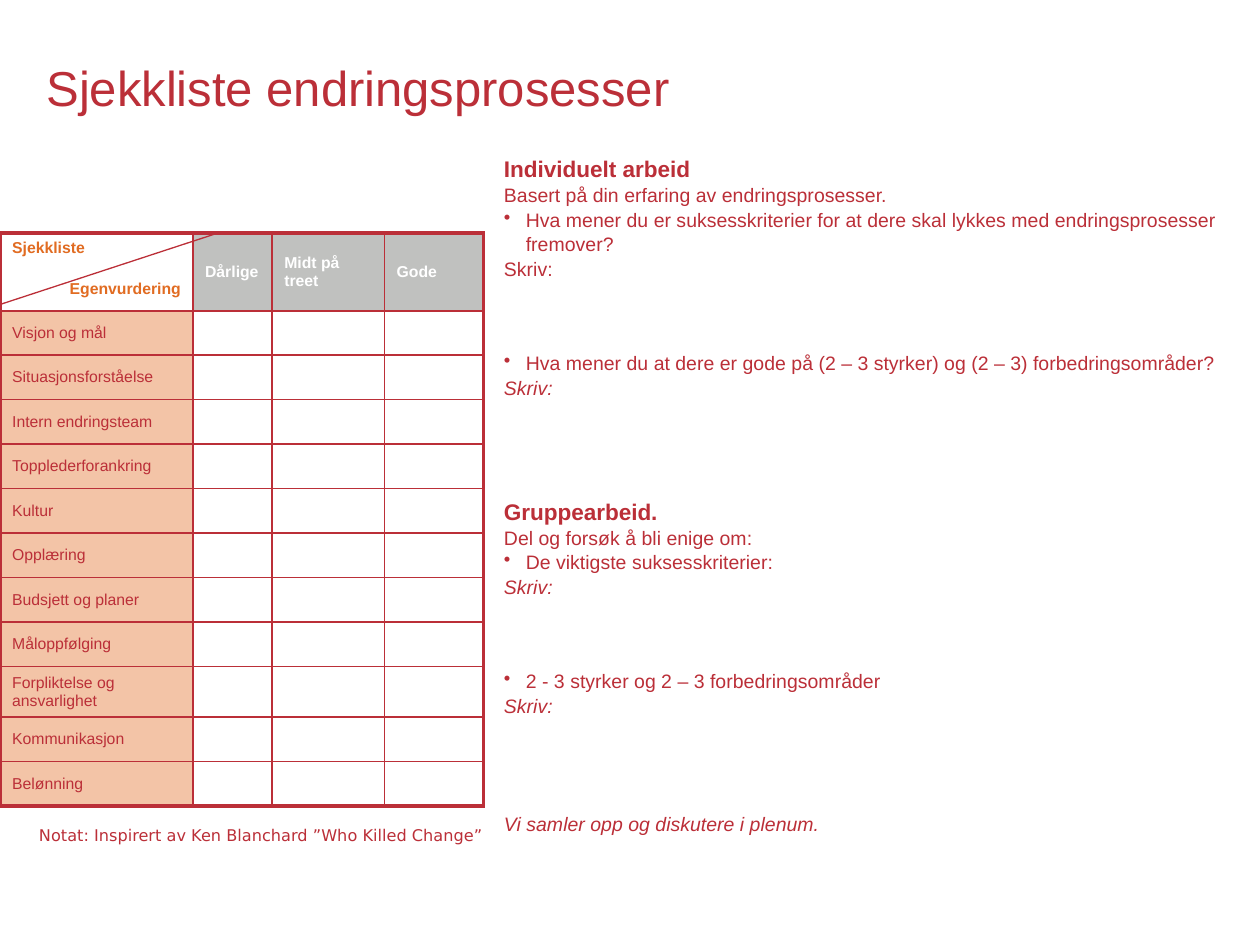
from lxml import etree
from pptx import Presentation
from pptx.dml.color import RGBColor
from pptx.enum.shapes import MSO_CONNECTOR, MSO_SHAPE
from pptx.enum.text import MSO_ANCHOR, PP_ALIGN
from pptx.oxml.ns import qn
from pptx.util import Pt

RED = RGBColor(0xBB, 0x2F, 0x38)
ORANGE = RGBColor(0xE1, 0x6C, 0x22)
PEACH = RGBColor(0xF3, 0xC4, 0xA7)
GREY = RGBColor(0xC0, 0xC1, 0xBF)
WHITE = RGBColor(0xFF, 0xFF, 0xFF)
MIDDLE, TOP = MSO_ANCHOR.MIDDLE, MSO_ANCHOR.TOP
LEFT, RIGHT = PP_ALIGN.LEFT, PP_ALIGN.RIGHT
STRAIGHT, RECTANGLE = MSO_CONNECTOR.STRAIGHT, MSO_SHAPE.RECTANGLE


def style(paragraph, size, color=RED, bold=False, italic=False, name="Arial"):
    font = paragraph.font
    font.name, font.size = name, Pt(size)
    font.bold, font.italic = bold, italic
    font.color.rgb = color


def add_border(cell, side, width):
    properties = cell._tc.get_or_add_tcPr()
    line = etree.SubElement(properties, qn(f"a:ln{side}"), w=str(Pt(width)))
    fill = etree.SubElement(line, qn("a:solidFill"))
    etree.SubElement(fill, qn("a:srgbClr"), val=str(RED))


presentation = Presentation()
presentation.slide_width, presentation.slide_height = Pt(720), Pt(540)
slide = presentation.slides.add_slide(presentation.slide_layouts[6])
shapes = slide.shapes

# Title
title = shapes.add_textbox(Pt(19.5), Pt(4.5), Pt(648), Pt(90)).text_frame
title.word_wrap = True
title.vertical_anchor = MIDDLE
title.text = "Sjekkliste endringsprosesser"
style(title.paragraphs[0], 28)

# Checklist table
HEADERS = ["Sjekkliste", "Dårlige", "Midt på treet", "Gode"]
TOPICS = ["Visjon og mål", "Situasjonsforståelse", "Intern endringsteam",
          "Topplederforankring", "Kultur", "Opplæring", "Budsjett og planer",
          "Måloppfølging", "Forpliktelse og ansvarlighet", "Kommunikasjon",
          "Belønning"]
COLUMN_WIDTHS = [110.25, 45.25, 64.25, 56.5]
ROW_HEIGHTS = [44.4] + [25.4] * 8 + [29] + [25.4] * 2
rows = [HEADERS] + [[topic, "", "", ""] for topic in TOPICS]
last_row, last_column = len(rows) - 1, len(HEADERS) - 1

table = shapes.add_table(len(rows), len(HEADERS), Pt(0), Pt(133.2),
                         Pt(sum(COLUMN_WIDTHS)), Pt(sum(ROW_HEIGHTS))).table
table.first_row = table.horz_banding = False
for column, width in zip(table.columns, COLUMN_WIDTHS):
    column.width = Pt(width)
for row, height in zip(table.rows, ROW_HEIGHTS):
    row.height = Pt(height)

for r, texts in enumerate(rows):
    for c, text in enumerate(texts):
        cell = table.cell(r, c)
        is_header, is_corner = r == 0, r == c == 0
        outer_sides = {"L": c == 0, "R": c == last_column,
                       "T": r == 0, "B": r == last_row}
        for side, is_outer in outer_sides.items():
            add_border(cell, side, 2.25 if is_outer else 1)
        if is_corner or (c > 0 and not is_header):
            cell.fill.background()
        else:
            cell.fill.solid()
            cell.fill.fore_color.rgb = GREY if is_header else PEACH
        cell.margin_left = cell.margin_right = Pt(7)
        cell.margin_top = cell.margin_bottom = Pt(3.6 if is_header else 0)
        cell.vertical_anchor = TOP if is_corner else MIDDLE
        cell.text = text
        color = ORANGE if is_corner else WHITE if is_header else RED
        style(cell.text_frame.paragraphs[0], 9, color, bold=is_header)

# Second label in the corner cell
corner_label = table.cell(0, 0).text_frame.add_paragraph()
corner_label.text = "Egenvurdering"
corner_label.alignment = RIGHT
corner_label.space_before = Pt(13)
style(corner_label, 9, ORANGE, bold=True)

# Diagonal through the corner cell
diagonal = shapes.add_connector(STRAIGHT, Pt(0), Pt(174), Pt(124.5), Pt(133.2))
diagonal.line.color.rgb = RED
diagonal.line.width = Pt(0.75)
etree.SubElement(diagonal._element.spPr, qn("a:effectLst"))

# Note below the table
note = shapes.add_textbox(Pt(19.4), Pt(468), Pt(409), Pt(14.4)).text_frame
note.word_wrap = True
note.margin_left = note.margin_right = Pt(2.9)
note.text = "Notat: Inspirert av Ken Blanchard ”Who Killed Change”"
style(note.paragraphs[0], 9.2, name="DejaVu Sans")

# Assignments: kind, space before, text
ASSIGNMENTS = [
    ("heading", 0, "Individuelt arbeid"),
    ("plain", 0, "Basert på din erfaring av endringsprosesser."),
    ("bullet", 0, "Hva mener du er suksesskriterier for at dere skal lykkes "
                  "med endringsprosesser fremover?"),
    ("plain", 0, "Skriv:"),
    ("bullet", 40, "Hva mener du at dere er gode på (2 – 3 styrker) og "
                   "(2 – 3) forbedringsområder?"),
    ("italic", 0, "Skriv:"),
    ("heading", 55.5, "Gruppearbeid."),
    ("plain", 0, "Del og forsøk å bli enige om:"),
    ("bullet", 0, "De viktigste suksesskriterier:"),
    ("italic", 0, "Skriv:"),
    ("bullet", 40, "2 - 3 styrker og 2 – 3 forbedringsområder"),
    ("italic", 0, "Skriv:"),
    ("italic", 53.5, "Vi samler opp og diskutere i plenum."),
]
panel = shapes.add_shape(RECTANGLE, Pt(288), Pt(88), Pt(432), Pt(397.5))
panel.shadow.inherit = False
panel.fill.solid()
panel.fill.fore_color.rgb = WHITE
panel.line.fill.background()
frame = panel.text_frame
frame.word_wrap = True
frame.vertical_anchor = TOP
frame.margin_left = frame.margin_right = frame.margin_top = frame.margin_bottom = 0
for index, (kind, gap, text) in enumerate(ASSIGNMENTS):
    paragraph = frame.add_paragraph() if index else frame.paragraphs[0]
    paragraph.text = text
    paragraph.alignment = LEFT
    paragraph.line_spacing = 1.05
    if gap:
        paragraph.space_before = Pt(gap)
    if kind == "bullet":
        properties = paragraph._p.get_or_add_pPr()
        properties.set("marL", str(Pt(12.5)))
        properties.set("indent", str(-Pt(12.5)))
        etree.SubElement(properties, qn("a:buChar"), char="•")
    is_heading = kind == "heading"
    style(paragraph, 12.9 if is_heading else 11.1, bold=is_heading,
          italic=kind == "italic")

presentation.save("out.pptx")
